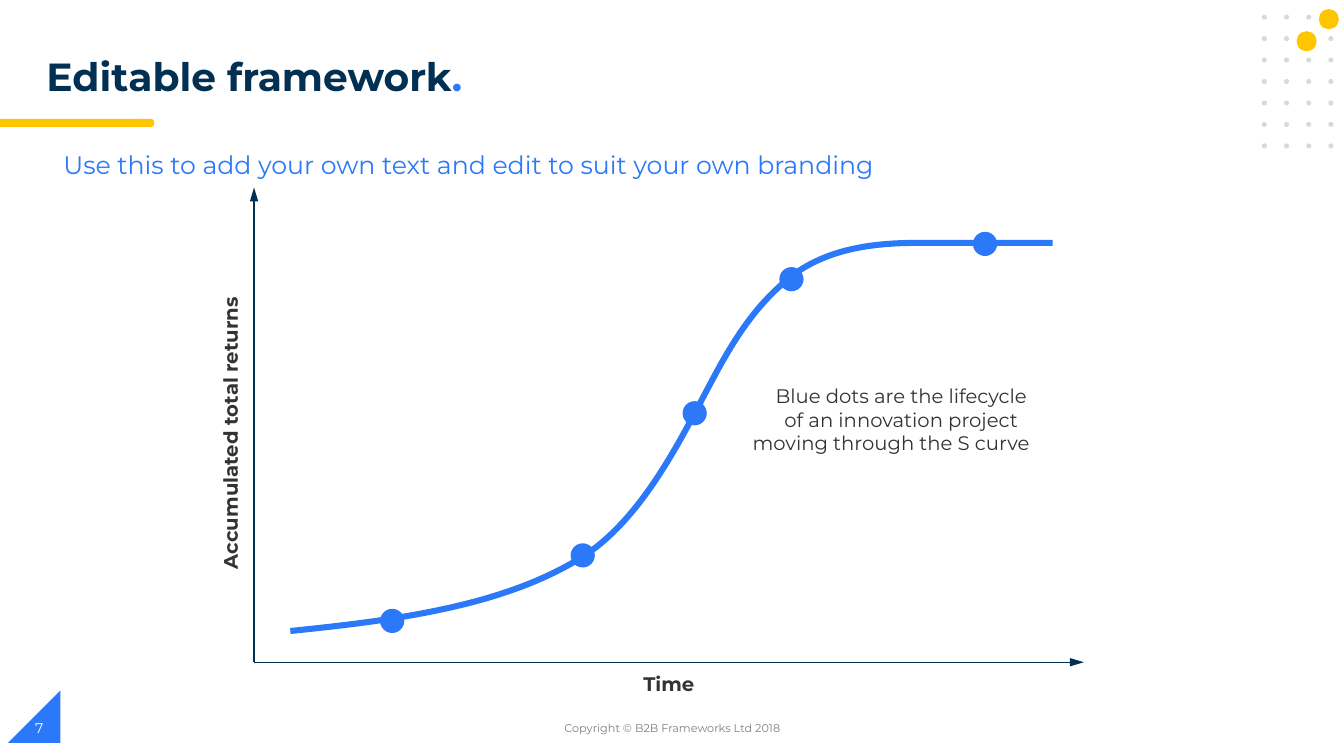
"""Build a slide showing the S curve of an innovation project."""
from dataclasses import dataclass
from itertools import product

from lxml import etree
from pptx import Presentation
from pptx.dml.color import RGBColor
from pptx.enum.shapes import MSO_CONNECTOR, MSO_SHAPE
from pptx.enum.text import MSO_ANCHOR, PP_ALIGN
from pptx.oxml.ns import qn
from pptx.util import Inches, Pt

OVAL = MSO_SHAPE.OVAL
RECTANGLE = MSO_SHAPE.RECTANGLE
TERMINATOR = MSO_SHAPE.FLOWCHART_TERMINATOR
RIGHT_TRIANGLE = MSO_SHAPE.RIGHT_TRIANGLE
STRAIGHT = MSO_CONNECTOR.STRAIGHT
TOP, MIDDLE = MSO_ANCHOR.TOP, MSO_ANCHOR.MIDDLE
LEFT, CENTER = PP_ALIGN.LEFT, PP_ALIGN.CENTER


@dataclass(frozen=True)
class Theme:
    font: str = "Montserrat"
    navy: str = "023053"
    blue: str = "2B79F8"
    yellow: str = "FFC600"
    pale: str = "D1DBE0"
    ink: str = "333333"
    grey: str = "7F7F7F"
    white: str = "FFFFFF"
    title: int = 28
    subtitle: int = 18
    label: int = 14
    page: int = 10
    footer: int = 8


THEME = Theme()
PADDED = (0.1, 0.05, 0.1, 0.05)
TIGHT = (0, 0.01, 0, 0)

CURVE_START = (2.88, 6.26)
CURVE_BENDS = [
    ((3.98, 6.15), (5.04, 6.0), (5.8, 5.51)),
    ((6.27, 5.2), (6.61, 4.63), (6.89, 4.1)),
    ((7.15, 3.62), (7.39, 3.07), (7.92, 2.69)),
    ((8.25, 2.47), (8.66, 2.41), (9.09, 2.41)),
]
CURVE_END = (10.44, 2.41)
STAGES = [(3.89, 6.16), (5.78, 5.51), (6.89, 4.1), (7.85, 2.77), (9.77, 2.42)]
ORIGIN = (2.52, 6.57)
AXIS_TIPS = [(2.52, 1.86), (10.75, 6.57)]


def apply_format(target, values):
    """Set each named attribute of the target."""
    for name, value in values.items():
        setattr(target, name, value)


def style_run(run, size, color, bold=False):
    """Give a run its font, size, weight and colour."""
    apply_format(run.font, {"name": THEME.font, "size": Pt(size), "bold": bold})
    run.font.color.rgb = RGBColor.from_string(color)


def set_frame(frame, insets, anchor=TOP):
    """Set wrapping, anchor and insets of a text frame."""
    sides = ("margin_left", "margin_top", "margin_right", "margin_bottom")
    margins = dict(zip(sides, map(Inches, insets)))
    apply_format(frame, {"word_wrap": True, "vertical_anchor": anchor, **margins})


def add_text(slide, box, lines, size, color, insets=PADDED, anchor=TOP,
             align=LEFT, bold=False):
    """Add a text box with one paragraph per line."""
    label = slide.shapes.add_textbox(*map(Inches, box))
    frame = label.text_frame
    set_frame(frame, insets, anchor)
    for index, line in enumerate(lines):
        paragraph = frame.add_paragraph() if index else frame.paragraphs[0]
        paragraph.alignment = align
        run = paragraph.add_run()
        run.text = line
        style_run(run, size, color, bold)
    return label


def add_shape(slide, kind, box, color):
    """Add a plain filled shape without an outline."""
    shape = slide.shapes.add_shape(kind, *map(Inches, box))
    shape.shadow.inherit = False
    shape.fill.solid()
    shape.fill.fore_color.rgb = RGBColor.from_string(color)
    shape.line.fill.background()
    return shape


def add_dot(slide, center, diameter, color):
    """Add a dot around its centre."""
    x, y = center
    box = (x - diameter / 2, y - diameter / 2, diameter, diameter)
    add_shape(slide, OVAL, box, color)


def add_axis(slide, start, tip):
    """Add an axis that ends in an arrowhead."""
    axis = slide.shapes.add_connector(STRAIGHT, *map(Inches, start + tip))
    axis.line.width = Pt(1)
    axis.line.color.rgb = RGBColor.from_string(THEME.navy)
    properties = axis.element.spPr
    etree.SubElement(properties.find(qn("a:ln")), qn("a:tailEnd"),
                     type="triangle", w="med", len="lg")
    etree.SubElement(properties, qn("a:effectLst"))


def bezier_points(start, bends, steps=24):
    """Return points along a chain of cubic curves."""
    points = []
    for first, second, end in bends:
        for step in range(1, steps + 1):
            t = step / steps
            u = 1 - t
            points.append(tuple(
                u**3 * a + 3 * u * u * t * b + 3 * u * t * t * c + t**3 * d
                for a, b, c, d in zip(start, first, second, end)))
        start = end
    return points


def add_curve(slide):
    """Draw the S curve as an open outline."""
    points = bezier_points(CURVE_START, CURVE_BENDS) + [CURVE_END]
    builder = slide.shapes.build_freeform(*map(Inches, CURVE_START))
    builder.add_line_segments(
        [(Inches(x), Inches(y)) for x, y in points], close=False)
    curve = builder.convert_to_shape()
    curve.shadow.inherit = False
    curve.fill.background()
    curve.line.width = Pt(4.33)
    curve.line.color.rgb = RGBColor.from_string(THEME.blue)


def add_title(slide):
    """Place and format the title."""
    title = slide.shapes.title
    place = dict(zip(("left", "top", "width", "height"),
                     map(Inches, (0.36, 0.52, 5.64, 0.6))))
    apply_format(title, place)
    set_frame(title.text_frame, PADDED)
    paragraph = title.text_frame.paragraphs[0]
    apply_format(paragraph, {"alignment": LEFT, "line_spacing": 0.9})
    for words, color in (("Editable framework", THEME.navy), (".", THEME.blue)):
        run = paragraph.add_run()
        run.text = words
        style_run(run, THEME.title, color, bold=True)


def add_decoration(slide):
    """Add the corner, the title bar and the dot grid."""
    corner = add_shape(slide, RIGHT_TRIANGLE, (0.08, 6.85, 0.52, 0.52), THEME.blue)
    corner.element.spPr.find(qn("a:xfrm")).set("flipH", "1")
    add_shape(slide, TERMINATOR, (1.34, 1.18, 0.19, 0.08), THEME.yellow)
    add_shape(slide, RECTANGLE, (0, 1.18, 1.41, 0.08), THEME.yellow)
    for column, row in product(range(4), range(7)):
        center = (12.54 + 0.22 * column, 0.17 + 0.213 * row)
        add_dot(slide, center, 0.05, THEME.pale)
    for center in ((13.18, 0.19), (12.96, 0.41)):
        add_dot(slide, center, 0.2, THEME.yellow)


def add_labels(slide):
    """Add the axis names and the note beside the curve."""
    note = add_text(slide, (7.46, 3.8, 2.96, 0.72),
                    ["Blue dots are the lifecycle of an innovation project",
                     "moving through the S curve"],
                    THEME.label, THEME.ink, TIGHT, align=CENTER)
    indents = note.text_frame.paragraphs[0]._p.get_or_add_pPr()
    for side in ("marL", "marR"):
        indents.set(side, str(Inches(0.2)))
    returns = add_text(slide, (0.9, 4.14, 2.77, 0.24), ["Accumulated total returns"],
                       THEME.label, THEME.ink, (0, 0, 0, 0), bold=True)
    returns.rotation = 270
    add_text(slide, (6.38, 6.66, 0.55, 0.24), ["Time"],
             THEME.label, THEME.ink, TIGHT, bold=True)


def main():
    """Build and save the slide."""
    deck = Presentation()
    apply_format(deck, {"slide_width": Inches(13.33), "slide_height": Inches(7.5)})
    slide = deck.slides.add_slide(deck.slide_layouts[5])
    add_decoration(slide)
    add_title(slide)
    add_text(slide, (4.42, 7.02, 4.5, 0.4), ["Copyright © B2B Frameworks Ltd 2018"],
             THEME.footer, THEME.grey, anchor=MIDDLE, align=CENTER)
    add_text(slide, (0.25, 7.02, 3, 0.4), ["7"], THEME.page, THEME.white, anchor=MIDDLE)
    add_text(slide, (0.53, 1.43, 8.59, 0.48),
             ["Use this to add your own text and edit to suit your own branding"],
             THEME.subtitle, THEME.blue)
    add_curve(slide)
    for tip in AXIS_TIPS:
        add_axis(slide, ORIGIN, tip)
    for stage in STAGES:
        add_dot(slide, stage, 0.24, THEME.blue)
    add_labels(slide)
    deck.save("out.pptx")


if __name__ == "__main__":
    main()
